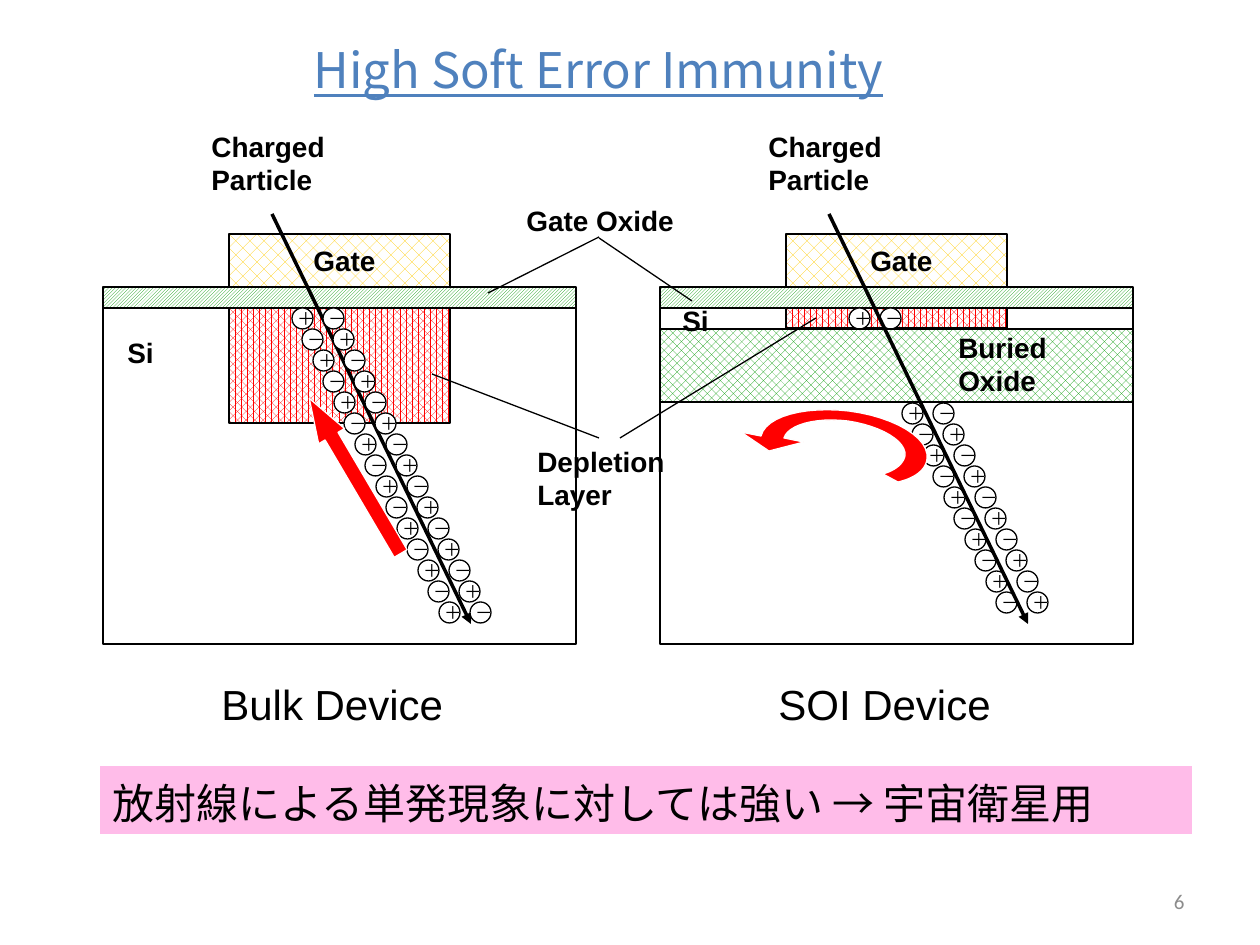
from dataclasses import dataclass

from lxml import etree
from pptx import Presentation
from pptx.dml.color import RGBColor
from pptx.enum.dml import MSO_PATTERN
from pptx.enum.shapes import MSO_CONNECTOR, MSO_SHAPE
from pptx.enum.text import MSO_ANCHOR, PP_ALIGN
from pptx.oxml.ns import qn
from pptx.util import Pt

PX = 914400 / 126
RECT, ELLIPSE, ARROW = MSO_SHAPE.RECTANGLE, MSO_SHAPE.OVAL, MSO_SHAPE.RIGHT_ARROW
STRAIGHT = MSO_CONNECTOR.STRAIGHT
LEFT, CENTER, RIGHT = PP_ALIGN.LEFT, PP_ALIGN.CENTER, PP_ALIGN.RIGHT
TOP, MIDDLE = MSO_ANCHOR.TOP, MSO_ANCHOR.MIDDLE
BLACK, WHITE, RED = "000000", "FFFFFF", "FF0000"
CARRIER = 21  # diameter of a charge carrier, also the row pitch

Box = tuple[int, int, int, int]


@dataclass
class Hatch:
    pattern: MSO_PATTERN
    color: str


GATE = Hatch(MSO_PATTERN.PERCENT_25, "FFCC00")
GATE_OXIDE = Hatch(MSO_PATTERN.LIGHT_UPWARD_DIAGONAL, "009900")
DEPLETION = Hatch(MSO_PATTERN.PERCENT_70, RED)
BURIED_OXIDE = Hatch(MSO_PATTERN.PERCENT_50, "009900")


@dataclass
class Label:
    text: str
    box: Box
    size: int = 16
    bold: bool = True
    color: str = BLACK
    font: str = "Arial"
    align: PP_ALIGN = LEFT
    anchor: MSO_ANCHOR = TOP
    underline: bool = False


@dataclass
class Device:
    name: str
    dx: int
    depletion_height: int


BULK = Device("Bulk Device", 0, 115)
SOI = Device("SOI Device", 557, 20)

LABELS = [
    Label("Gate Oxide", (514, 197, 179, 47)),
    Label("Si", (115, 329, 105, 47)),
    Label("Si", (670, 297, 105, 47)),
    Label("Buried Oxide", (946, 324, 136, 81)),
    Label("Depletion Layer", (525, 438, 179, 81)),
]
LEADERS = [
    (599, 237, 488, 293),
    (599, 238, 692, 301),
    (432, 374, 599, 438),
    (816, 318, 620, 438),
]
# Start point, then cubic curves (three points) and straight edges (one point)
CURVED_ARROW_START = (784, 438)
CURVED_ARROW = [
    [(788, 425), (815, 417), (848, 421)],
    [(881, 426), (907, 441), (905, 456)],
    [(903, 464), (896, 470), (883, 474)],
    [(898, 482)],
    [(916, 478), (926, 469), (927, 459)],
    [(930, 438), (895, 417), (849, 411)],
    [(805, 406), (766, 416), (761, 436)],
    [(741, 432)],
    [(769, 451)],
    [(804, 442)],
]


def emu(px: float) -> int:
    return round(px * PX)


def rgb(color: str) -> RGBColor:
    return RGBColor.from_string(color)


def add_run(p, text: str, size: int, color: str = BLACK, font: str = "Arial"):
    r = p.add_run()
    r.text = text
    r.font.size = Pt(size)
    r.font.name = font
    r.font.color.rgb = rgb(color)
    return r


def style(sp, fill: str | Hatch, line: str | None) -> None:
    sp.shadow.inherit = False
    if isinstance(fill, Hatch):
        sp.fill.patterned()
        sp.fill.pattern = fill.pattern
        sp.fill.fore_color.rgb = rgb(fill.color)
        sp.fill.back_color.rgb = rgb(WHITE)
    else:
        sp.fill.solid()
        sp.fill.fore_color.rgb = rgb(fill)
    if line:
        sp.line.color.rgb = rgb(line)
        sp.line.width = Pt(0.75)
    else:
        sp.line.fill.background()


def add_shape(s, kind, box: Box, fill: str | Hatch, line: str | None = BLACK):
    sp = s.shapes.add_shape(kind, *map(emu, box))
    style(sp, fill, line)
    return sp


def add_label(s, label: Label) -> None:
    tf = s.shapes.add_textbox(*map(emu, label.box)).text_frame
    tf.word_wrap = True
    tf.vertical_anchor = label.anchor
    p = tf.paragraphs[0]
    p.alignment = label.align
    r = add_run(p, label.text, label.size, label.color, label.font)
    r.font.bold = label.bold
    r.font.underline = label.underline


def add_line(s, ends: Box, width: float = 0.75, arrow: bool = False) -> None:
    c = s.shapes.add_connector(STRAIGHT, *map(emu, ends))
    c.line.color.rgb = rgb(BLACK)
    c.line.width = Pt(width)
    if arrow:
        etree.SubElement(c.line._get_or_add_ln(), qn("a:tailEnd"), type="triangle")
    etree.SubElement(c._element.spPr, qn("a:effectLst"))


def add_carriers(s, left: int, top: int, rows: int) -> None:
    """Pairs of opposite charges along the track, swapping sides on each row."""
    for row in range(rows):
        signs = "＋－" if row % 2 == 0 else "－＋"
        for col, sign in enumerate(signs):
            x = left + row * CARRIER // 2 + col * CARRIER * 3 // 2
            box = (x, top + row * CARRIER, CARRIER, CARRIER)
            tf = add_shape(s, ELLIPSE, box, WHITE).text_frame
            tf.word_wrap = False
            tf.vertical_anchor = MIDDLE
            p = tf.paragraphs[0]
            p.alignment = LEFT
            add_run(p, sign, 10)


def add_device(s, device: Device) -> None:
    dx = device.dx
    add_shape(s, RECT, (229 + dx, 234, 221, 53), GATE)
    add_shape(s, RECT, (103 + dx, 308, 473, 336), WHITE)
    add_shape(s, RECT, (103 + dx, 287, 473, 21), GATE_OXIDE)
    add_shape(s, RECT, (229 + dx, 308, 221, device.depletion_height), DEPLETION)
    add_label(s, Label("Gate", (301 + dx, 237, 88, 47)))
    add_label(s, Label("Charged Particle", (199 + dx, 123, 147, 81)))
    add_label(s, Label(device.name, (209 + dx, 672, 262, 63), 24, False))


def add_track(s, device: Device) -> None:
    add_line(s, (272 + device.dx, 214, 471 + device.dx, 624), 2, arrow=True)


def add_curved_arrow(s) -> None:
    points = [CURVED_ARROW_START]
    for segment in CURVED_ARROW:
        if len(segment) == 1:
            points += segment
            continue
        a, (b, c, d) = points[-1], segment
        for t in (i / 12 for i in range(1, 13)):
            u = 1 - t
            weights = (u**3, 3 * u * u * t, 3 * u * t * t, t**3)
            points.append(tuple(
                sum(w * q[axis] for w, q in zip(weights, (a, b, c, d)))
                for axis in (0, 1)))
    outline = [(emu(x), emu(y)) for x, y in points]
    builder = s.shapes.build_freeform(*outline[0])
    builder.add_line_segments(outline[1:], close=True)
    style(builder.convert_to_shape(), RED, WHITE)


def add_banner(s) -> None:
    sp = add_shape(s, RECT, (100, 766, 1092, 68), "FFBCE9", None)
    tf = sp.text_frame
    tf.word_wrap = True
    tf.vertical_anchor = TOP
    p = tf.paragraphs[0]
    p.alignment = LEFT
    p.line_spacing = 1.1
    add_run(p, "放射線による単発現象に対しては強い → 宇宙衛星用", 24)


def main() -> None:
    prs = Presentation()
    prs.slide_width, prs.slide_height = emu(1260), emu(945)
    s = prs.slides.add_slide(prs.slide_layouts[6])
    add_label(s, Label("High Soft Error Immunity", (189, 32, 819, 73), 28, False,
                       "4F81BD", "Noto Sans CJK JP", CENTER, MIDDLE, True))
    add_device(s, BULK)
    add_track(s, BULK)
    add_carriers(s, 292, 308, 15)
    add_device(s, SOI)
    add_carriers(s, 849, 308, 1)
    add_shape(s, RECT, (660, 329, 473, 73), BURIED_OXIDE)
    add_carriers(s, 902, 403, 10)
    add_track(s, SOI)
    add_banner(s)
    for label in LABELS:
        add_label(s, label)
    for leader in LEADERS:
        add_line(s, leader)
    drift = add_shape(s, ARROW, (265, 461, 180, 30), RED, WHITE)
    drift.rotation = 239.5
    drift.adjustments[0], drift.adjustments[1] = 0.5, 1.46
    add_curved_arrow(s)
    add_label(s, Label("6", (903, 876, 294, 50), 12, False, "8C8C8C", "Calibri",
                       RIGHT, MIDDLE))
    prs.save("out.pptx")


if __name__ == "__main__":
    main()
